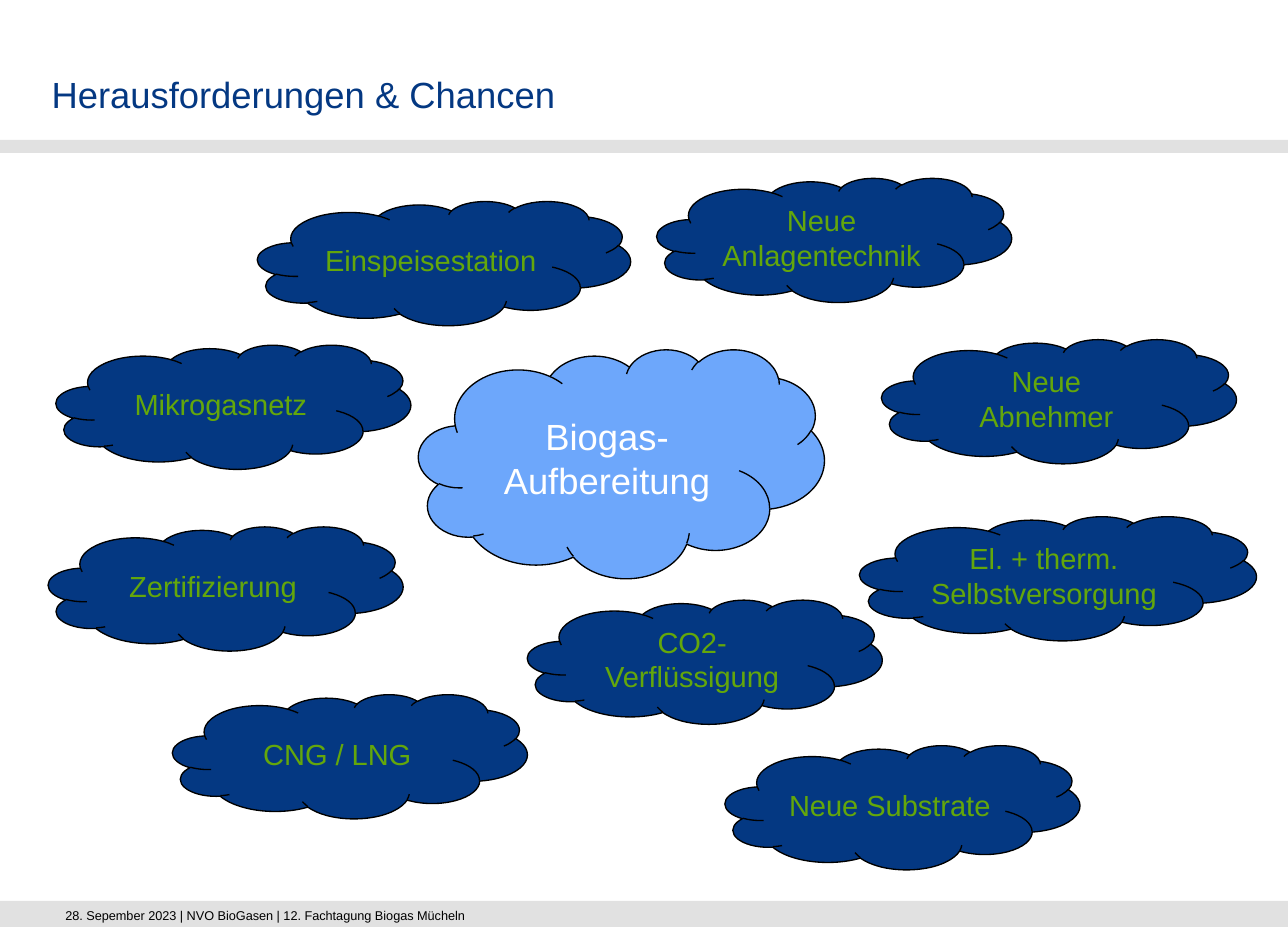
from pptx import Presentation
from pptx.dml.color import RGBColor
from pptx.enum.shapes import MSO_SHAPE
from pptx.enum.text import MSO_ANCHOR, MSO_AUTO_SIZE, PP_ALIGN
from pptx.util import Cm, Pt

CLOUD, RECT = MSO_SHAPE.CLOUD, MSO_SHAPE.RECTANGLE
LEFT, CENTER = PP_ALIGN.LEFT, PP_ALIGN.CENTER
TOP, MIDDLE, BOTTOM = MSO_ANCHOR.TOP, MSO_ANCHOR.MIDDLE, MSO_ANCHOR.BOTTOM
NAVY = RGBColor(0x04, 0x38, 0x82)
SKY = RGBColor(0x6D, 0xA7, 0xFB)
GREEN = RGBColor(0x64, 0xA7, 0x0B)
GREY = RGBColor(0xE1, 0xE1, 0xE1)
WHITE = RGBColor(0xFF, 0xFF, 0xFF)
BLACK = RGBColor(0, 0, 0)

TITLE = "Herausforderungen & Chancen"
FOOTER = "28. Sepember 2023 | NVO BioGasen | 12. Fachtagung Biogas Mücheln"
CORE = "Biogas-Aufbereitung"

TITLE_BOX = (4, 0, 92, 12.5)
FOOTER_BOX = (4.07, 97.2, 88.4, 2.4)
CORE_BOX = (32.5, 37.66, 31.5, 24.7)
BARS = [(0, 97.2, 100, 2.8), (0, 15.1, 100, 1.4)]
CLOUD_W, CLOUD_H = 27.54, 13.4
TOPICS = [
    ("Einspeisestation", 20, 21.7, 28.96),
    ("Mikrogasnetz", 4.35, 37.2, CLOUD_W),
    ("Zertifizierung", 3.75, 56.8, CLOUD_W),
    ("CNG / LNG", 13.4, 74.9, CLOUD_W),
    ("CO2-Verflüssigung", 40.95, 64.7, CLOUD_W),
    ("Neue Substrate", 56.3, 80.4, CLOUD_W),
    ("El. + therm. Selbstversorgung", 66.75, 55.7, 30.8),
    ("Neue Abnehmer", 68.45, 36.6, CLOUD_W),
    ("Neue Anlagentechnik", 51, 19.2, CLOUD_W),
]

prs = Presentation()
prs.slide_width, prs.slide_height = Cm(25), Cm(18)
s = prs.slides.add_slide(prs.slide_layouts[5])


def place(box):
    sides = (prs.slide_width, prs.slide_height) * 2
    return [int(side * share / 100) for side, share in zip(sides, box)]


def write(sp, text, size, color, align, anchor, spacing=1.0):
    tf = sp.text_frame
    frame = {"word_wrap": True, "auto_size": MSO_AUTO_SIZE.NONE,
             "vertical_anchor": anchor}
    for name, value in frame.items():
        setattr(tf, name, value)
    p = tf.paragraphs[0]
    p.alignment, p.line_spacing = align, spacing
    r = p.add_run()
    r.text = text
    for name, value in {"name": "Arial", "size": Pt(size)}.items():
        setattr(r.font, name, value)
    r.font.color.rgb = color


def add_shape(kind, box, fill):
    sp = s.shapes.add_shape(kind, *place(box))
    sp.shadow.inherit = False
    sp.fill.solid()
    sp.fill.fore_color.rgb = fill
    sp.line.fill.background()
    return sp


def add_cloud(text, box, fill, size, color):
    sp = add_shape(CLOUD, box, fill)
    sp.line.color.rgb = BLACK
    sp.line.width = Pt(0.75)
    write(sp, text, size, color, CENTER, MIDDLE)


for bar in BARS:
    add_shape(RECT, bar, GREY)

title = s.shapes.title
title.left, title.top, title.width, title.height = place(TITLE_BOX)
for side in ("left", "top", "right", "bottom"):
    setattr(title.text_frame, f"margin_{side}", 0)
write(title, TITLE, 20, NAVY, LEFT, BOTTOM, Pt(24))

footer = s.shapes.add_textbox(*place(FOOTER_BOX))
write(footer, FOOTER, 7, BLACK, LEFT, TOP)

add_cloud(CORE, CORE_BOX, SKY, 20, WHITE)
for text, left, top, width in TOPICS:
    add_cloud(text, (left, top, width, CLOUD_H), NAVY, 16, GREEN)

prs.save("out.pptx")
